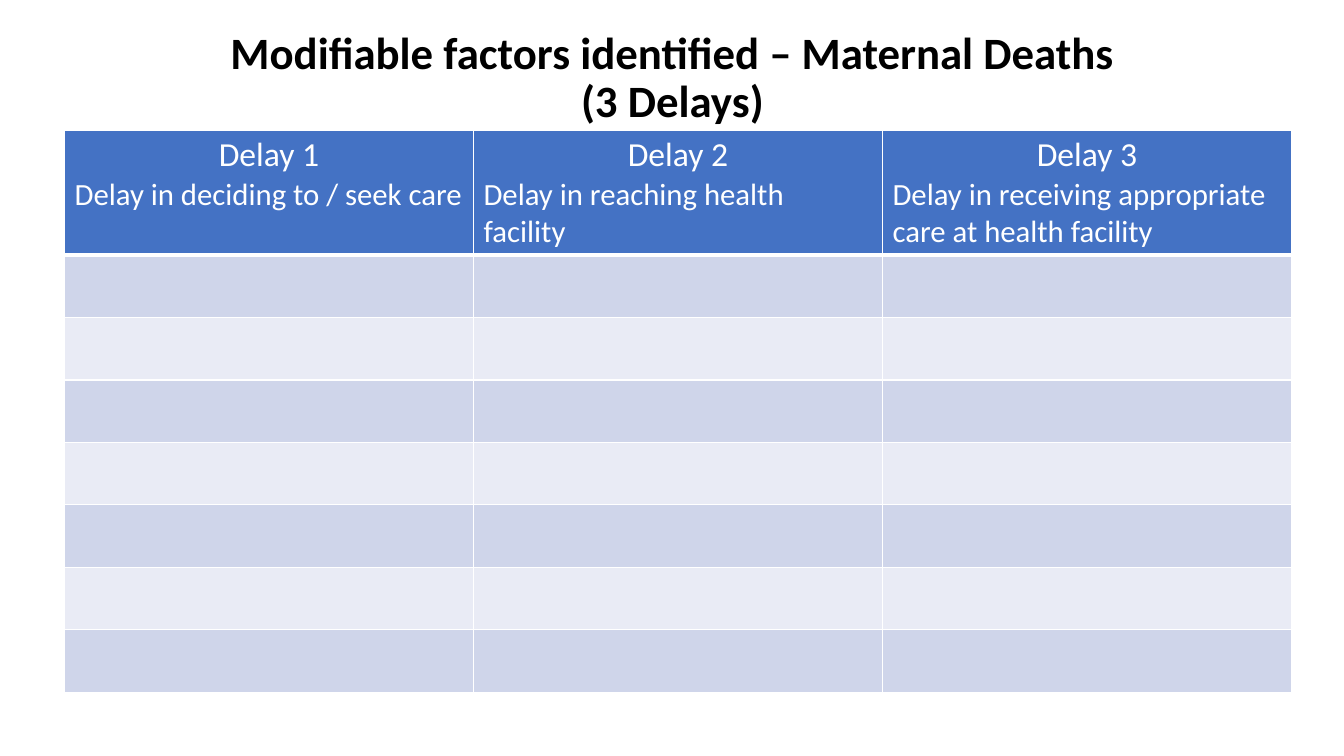
from lxml import etree
from pptx import Presentation
from pptx.dml.color import RGBColor
from pptx.enum.text import MSO_ANCHOR, PP_ALIGN
from pptx.oxml.ns import qn
from pptx.util import Inches, Pt

CENTER, LEFT = PP_ALIGN.CENTER, PP_ALIGN.LEFT
MIDDLE = MSO_ANCHOR.MIDDLE

BLACK = RGBColor(0x00, 0x00, 0x00)
WHITE = RGBColor(0xFF, 0xFF, 0xFF)
HEADER_BLUE = RGBColor(0x44, 0x72, 0xC4)
BANDS = (RGBColor(0xCF, 0xD5, 0xEA), RGBColor(0xE9, 0xEB, 0xF5))

WIDTH, HEIGHT = 13.33, 7.5
EMPTY_ROWS = 7
ROW_HEIGHT = 0.62
HEADER_HEIGHT = 2 * ROW_HEIGHT

TITLE = ("Modifiable factors identified – Maternal Deaths", "(3 Delays)")
DELAYS = (
    ("Delay 1", "Delay in deciding to / seek care"),
    ("Delay 2", "Delay in reaching health facility"),
    ("Delay 3", "Delay in receiving appropriate care at health facility"),
)


def write(para, *lines, size, color, font="Calibri", bold=False, align=LEFT, spacing=1.0):
    """Fill a paragraph with lines parted by line breaks."""
    para.alignment = align
    para.line_spacing = spacing
    for number, line in enumerate(lines):
        if number:
            para.add_line_break()
        span = para.add_run()
        span.text = line
        span.font.name = font
        span.font.size = Pt(size)
        span.font.bold = bold
        span.font.color.rgb = color


def draw_borders(cell, color, bottom=1):
    properties = cell._tc.get_or_add_tcPr()
    for side, points in (("L", 1), ("R", 1), ("T", 1), ("B", bottom)):
        line = etree.SubElement(properties, qn(f"a:ln{side}"), w=str(Pt(points)))
        fill = etree.SubElement(line, qn("a:solidFill"))
        etree.SubElement(fill, qn("a:srgbClr"), val=str(color))


class DelaySlide:
    """The slide, with positions given as shares of its size."""

    def __init__(self, deck):
        self.width, self.height = deck.slide_width, deck.slide_height
        self.page = deck.slides.add_slide(deck.slide_layouts[6])

    def area(self, left, top, width, height):
        return (round(left * self.width), round(top * self.height),
                round(width * self.width), round(height * self.height))

    def title(self, lines, *area):
        box = self.page.shapes.add_textbox(*self.area(*area))
        frame = box.text_frame
        frame.word_wrap = True
        frame.vertical_anchor = MIDDLE
        write(frame.paragraphs[0], *lines, size=32, color=BLACK,
              bold=True, align=CENTER, spacing=0.9)

    def table(self, headings, *area):
        shape = self.page.shapes.add_table(
            EMPTY_ROWS + 1, len(headings), *self.area(*area))
        grid = shape.table
        for number, row in enumerate(grid.rows):
            row.height = Inches(ROW_HEIGHT if number else HEADER_HEIGHT)
            for cell in row.cells:
                draw_borders(cell, WHITE, bottom=1 if number else 3)
                cell.fill.solid()
                cell.fill.fore_color.rgb = BANDS[(number - 1) % 2] if number else HEADER_BLUE
        for cell, (name, meaning) in zip(grid.rows[0].cells, headings):
            frame = cell.text_frame
            write(frame.paragraphs[0], name, size=24, color=WHITE, align=CENTER)
            write(frame.add_paragraph(), meaning, size=22, color=WHITE)


def main():
    deck = Presentation()
    deck.slide_width, deck.slide_height = Inches(WIDTH), Inches(HEIGHT)
    slide = DelaySlide(deck)

    # Centred heading
    slide.title(TITLE, 0.92 / WIDTH, 0.06 / HEIGHT, 11.5 / WIDTH, 1.45 / HEIGHT)

    # Three delays above empty banded rows
    table_height = HEADER_HEIGHT + EMPTY_ROWS * ROW_HEIGHT
    slide.table(DELAYS, 0.64 / WIDTH, 1.29 / HEIGHT, 12.17 / WIDTH, table_height / HEIGHT)

    deck.save("out.pptx")


if __name__ == "__main__":
    main()
